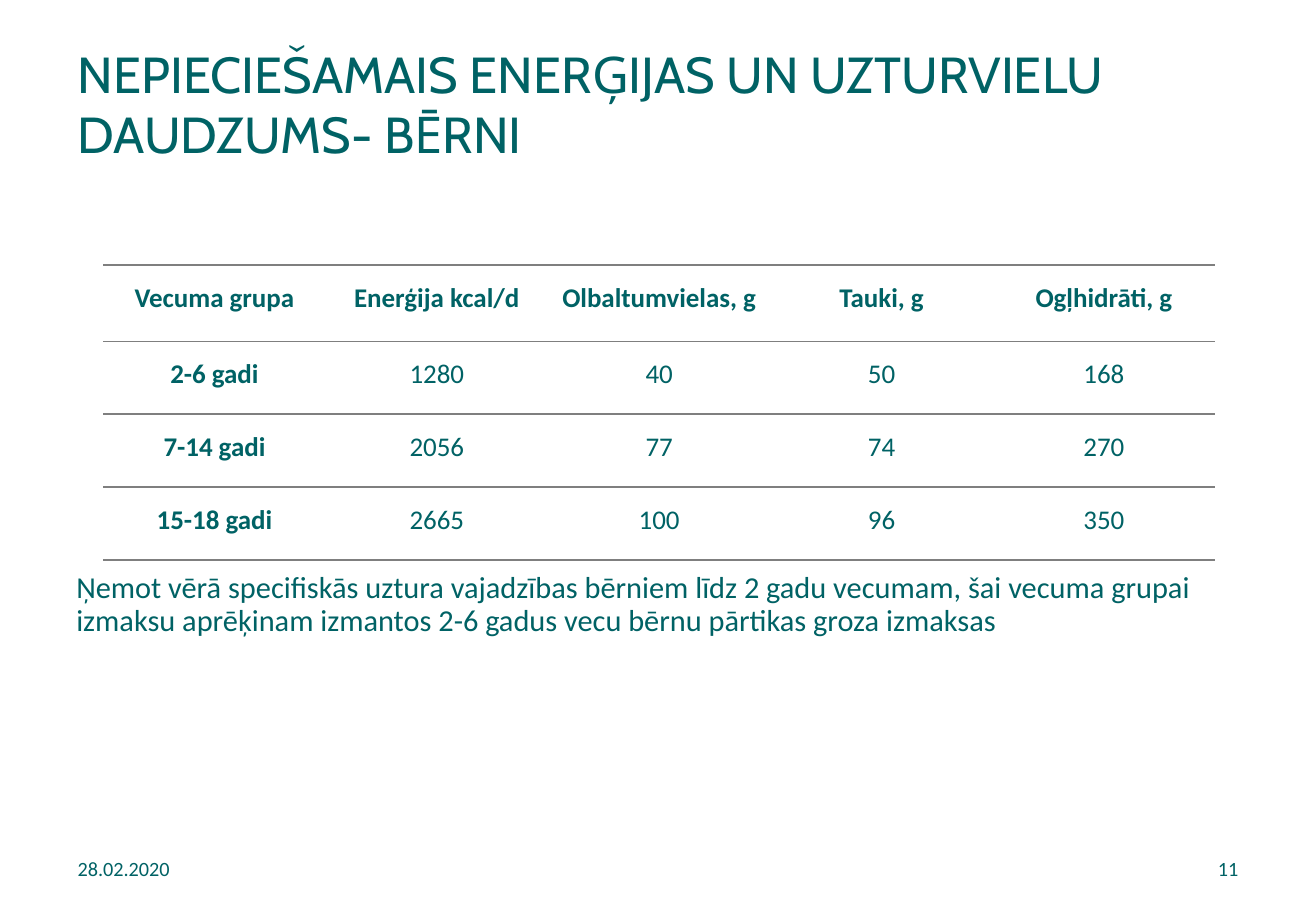
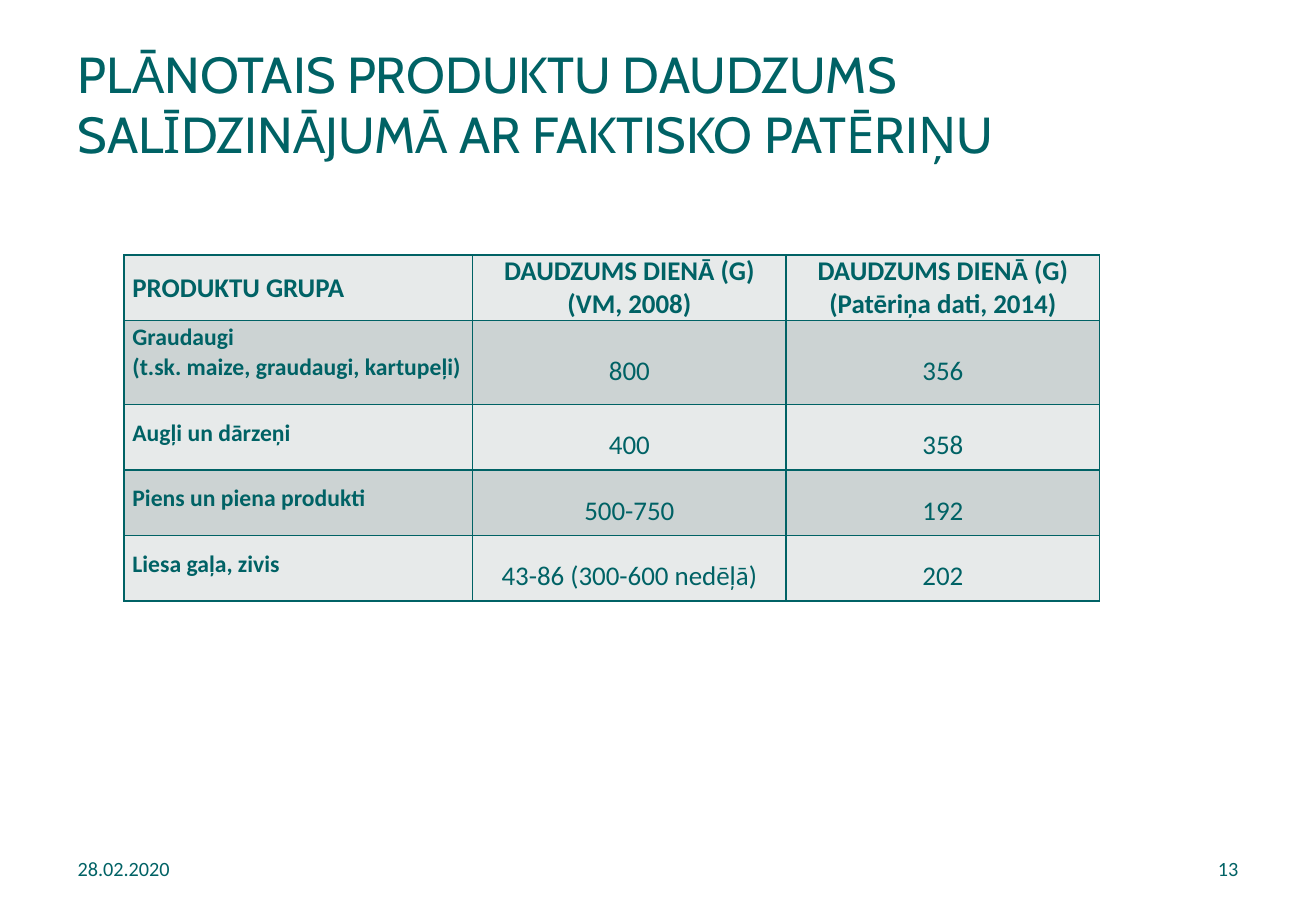
"""Build two slides on planned energy, nutrient and product amounts."""
from dataclasses import dataclass

from lxml import etree
from pptx import Presentation
from pptx.dml.color import RGBColor
from pptx.enum.text import MSO_ANCHOR, MSO_AUTO_SIZE, PP_ALIGN
from pptx.oxml.ns import qn
from pptx.util import Inches, Pt

LEFT, MID, RIGHT, JUST = PP_ALIGN.LEFT, PP_ALIGN.CENTER, PP_ALIGN.RIGHT, PP_ALIGN.JUSTIFY
TOP, HALF = MSO_ANCHOR.TOP, MSO_ANCHOR.MIDDLE
FIXED = MSO_AUTO_SIZE.NONE


@dataclass(frozen=True)
class Theme:
    ink: str = "006265"
    rule: str = "7F7F7F"
    pale: str = "E7EAEA"
    band: str = "CCD3D3"
    head: str = "Cabin"
    body: str = "Calibri"
    title: int = 30
    note: int = 18
    cell: int = 16
    label: int = 14
    foot: int = 12


theme = Theme()


def write(frame, text, size, font=theme.body, bold=False, align=LEFT, space=1.0):
    frame.word_wrap = True
    for i, line in enumerate(text.split("\n")):
        para = frame.add_paragraph() if i else frame.paragraphs[0]
        para.alignment = align
        para.line_spacing = space
        run = para.add_run()
        run.text = line
        run.font.size = Pt(size)
        run.font.name = font
        run.font.bold = bold
        run.font.color.rgb = RGBColor.from_string(theme.ink)


def grid(page, left, top, widths, heights, sides, color, fills):
    shape = page.shapes.add_table(len(heights), len(widths), Inches(left), Inches(top),
                                  Inches(sum(widths)), Inches(sum(heights)))
    table = shape.table
    table.first_row = table.horz_banding = False
    for col, width in zip(table.columns, widths):
        col.width = Inches(width)
    for r, height in enumerate(heights):
        table.rows[r].height = Inches(height)
        for cell in table.rows[r].cells:
            cell.margin_left = cell.margin_right = Inches(0.07)
            cell.margin_top = cell.margin_bottom = 0
            if fills:
                cell.fill.solid()
                cell.fill.fore_color.rgb = RGBColor.from_string(fills[r % len(fills)])
            else:
                cell.fill.background()
            props = cell._tc.get_or_add_tcPr()
            for i, side in enumerate("LRTB"):
                line = etree.Element(qn("a:ln" + side), w=str(Pt(1)))
                if side in sides:
                    paint = etree.SubElement(line, qn("a:solidFill"))
                    etree.SubElement(paint, qn("a:srgbClr"), val=color)
                else:
                    etree.SubElement(line, qn("a:noFill"))
                props.insert(i, line)
    return table


deck = Presentation()
deck.slide_width, deck.slide_height = Inches(10.83), Inches(7.5)

pages = []
for title, number in (
    ("NEPIECIEŠAMAIS ENERĢIJAS UN UZTURVIELU DAUDZUMS- BĒRNI", "11"),
    ("PLĀNOTAIS PRODUKTU DAUDZUMS SALĪDZINĀJUMĀ AR FAKTISKO PATĒRIŅU", "13"),
):
    page = deck.slides.add_slide(deck.slide_layouts[5])
    head = page.shapes.title
    head.left, head.top = Inches(0.54), Inches(0.3)
    head.width, head.height = Inches(9.75), Inches(0.85)
    head.text_frame.auto_size = FIXED
    head.text_frame.vertical_anchor = TOP
    write(head.text_frame, title, theme.title, font=theme.head)
    for left, text, align in ((0.54, "28.02.2020", LEFT), (7.76, number, RIGHT)):
        foot = page.shapes.add_textbox(Inches(left), Inches(6.95), Inches(2.53), Inches(0.4))
        foot.text_frame.vertical_anchor = HALF
        write(foot.text_frame, text, theme.foot, align=align)
    pages.append(page)

needs, goods = pages

rows = (
    ("Vecuma grupa", "Enerģija kcal/d", "Olbaltumvielas, g", "Tauki, g", "Ogļhidrāti, g"),
    ("2-6 gadi", "1280", "40", "50", "168"),
    ("7-14 gadi", "2056", "77", "74", "270"),
    ("15-18 gadi", "2665", "100", "96", "350"),
)
table = grid(needs, 0.85, 2.18, [1.83] * 5, [0.63] + [0.6] * 3, "TB", theme.rule, None)
for r, row in enumerate(rows):
    for c, text in enumerate(row):
        write(table.cell(r, c).text_frame, text, theme.cell,
              bold=r == 0 or c == 0, align=MID, space=1.5)

note = needs.shapes.add_textbox(Inches(0.53), Inches(4.66), Inches(9.76), Inches(0.7))
write(note.text_frame, "Ņemot vērā specifiskās uztura vajadzības bērniem līdz 2 gadu vecumam, "
      "šai vecuma grupai izmaksu aprēķinam izmantos 2-6 gadus vecu bērnu pārtikas groza izmaksas",
      theme.note, space=0.9)

rows = (
    ("PRODUKTU GRUPA", "DAUDZUMS DIENĀ (G)\n(VM, 2008)",
     "DAUDZUMS DIENĀ (G)\n(Patēriņa dati, 2014)"),
    ("Graudaugi\n(t.sk. maize, graudaugi, kartupeļi)", "800", "356"),
    ("Augļi un dārzeņi", "400", "358"),
    ("Piens un piena produkti", "500-750", "192"),
    ("Liesa gaļa, zivis", "43-86 (300-600 nedēļā)", "202"),
)
table = grid(goods, 1.02, 2.1, [2.87, 2.58, 2.58], [0.54, 0.69] + [0.54] * 3,
             "LRTB", theme.ink, (theme.pale, theme.band))
for r, row in enumerate(rows):
    for c, text in enumerate(row):
        cell = table.cell(r, c)
        cell.vertical_anchor = HALF if r and c else TOP
        lines = text.count("\n")
        tight = 1.07 if r else 1.0
        write(cell.text_frame, text, theme.label if r and not c else theme.cell,
              bold=r == 0 or c == 0, align=MID if c else LEFT if r else JUST,
              space=tight if lines else 1.5)

deck.save("out.pptx")
